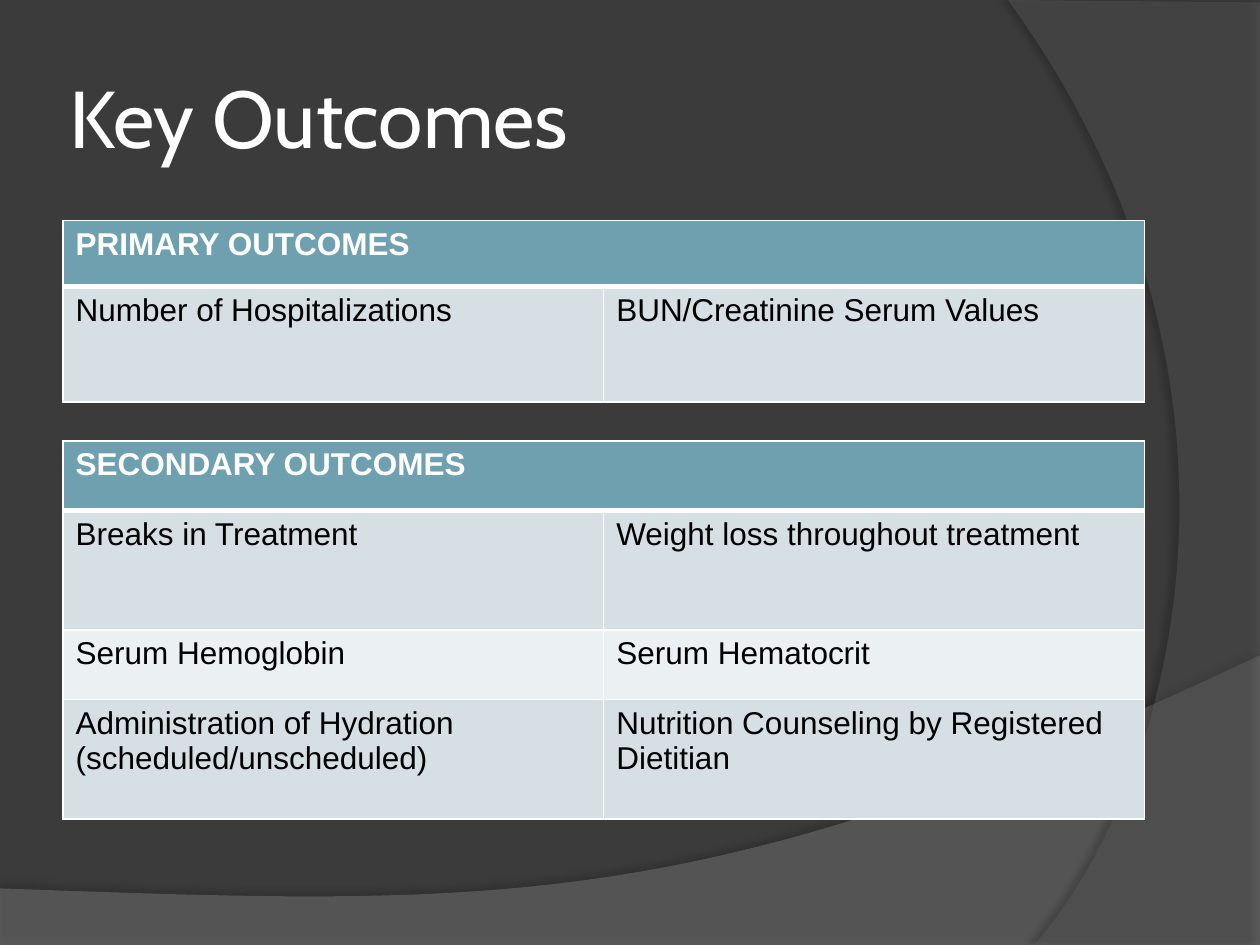
"""Build the Key Outcomes slide with its two outcome tables."""
from lxml.etree import SubElement
from pptx import Presentation
from pptx.dml.color import RGBColor
from pptx.enum.text import MSO_ANCHOR
from pptx.oxml import parse_xml
from pptx.oxml.ns import nsdecls, qn
from pptx.util import Cm, Pt

BACKGROUND = RGBColor(0x3B, 0x3B, 0x3B)
WAVE = RGBColor(0x7F, 0x7F, 0x7F)
ARC = RGBColor(0x5E, 0x5E, 0x5E)
HEADER = RGBColor(0x6E, 0xA0, 0xB0)
BANDS = [RGBColor(0xEB, 0xF0, 0xF2), RGBColor(0xD5, 0xDF, 0xE4)]
WHITE = RGBColor(0xFF, 0xFF, 0xFF)
BLACK = RGBColor(0x00, 0x00, 0x00)
STEPS = 60


def write(tf, text, color, fmt):
    p = tf.paragraphs[0]
    r = p.add_run()
    r.text = text
    r.font.color.rgb = color
    for name, value in fmt.items():
        setattr(r.font, name, value)


def set_borders(cell, bottom):
    tcPr = cell._tc.get_or_add_tcPr()
    widths = {"lnL": 1, "lnR": 1, "lnT": 1, "lnB": bottom}
    for i, (tag, width) in enumerate(widths.items()):
        tcPr.insert(i, parse_xml(
            f'<a:{tag} {nsdecls("a")} w="{Pt(width)}"><a:solidFill>'
            f'<a:srgbClr val="{WHITE}"/></a:solidFill></a:{tag}>'))


prs = Presentation()
prs.slide_width, prs.slide_height = Cm(25.4), Cm(19.05)
s = prs.slides.add_slide(prs.slide_layouts[6])
s.background.fill.solid()
s.background.fill.fore_color.rgb = BACKGROUND

swooshes = [
    ([(0, 17.91), (0, 19.05), (25.4, 19.05)],
     [(25.4, 13.21), (14.2, 18.52), (9.93, 18.26), (0, 17.91)],
     WAVE, 45, 35, 3.5, 270),
    ([(25.4, 0.05), (25.4, 19.05)],
     [(20.85, 19.05), (23.75, 15.72), (25.86, 7.62), (20.32, 0)],
     ARC, 40, 45, 4, 180),
]
for corners, curve, color, alpha, shade, dist, angle in swooshes:
    points = list(corners)
    for i in range(STEPS + 1):
        t = i / STEPS
        weights = [(1 - t) ** 3, 3 * t * (1 - t) ** 2, 3 * t ** 2 * (1 - t), t ** 3]
        points.append(tuple(sum(w * c[axis] for w, c in zip(weights, curve))
                            for axis in (0, 1)))
    points = [(Cm(x), Cm(y)) for x, y in points]
    builder = s.shapes.build_freeform(*points[0])
    builder.add_line_segments(points[1:])
    sp = builder.convert_to_shape()
    sp.fill.solid()
    sp.fill.fore_color.rgb = color
    sp.line.fill.background()
    sp.shadow.inherit = False
    spPr = sp._element.spPr
    clr = spPr.find(qn("a:solidFill")).find(qn("a:srgbClr"))
    SubElement(clr, qn("a:alpha"), val=str(alpha * 1000))
    spPr.find(qn("a:effectLst")).append(parse_xml(
        f'<a:outerShdw {nsdecls("a")} blurRad="{Pt(4)}" dist="{Pt(dist)}" '
        f'dir="{angle * 60000}" rotWithShape="0"><a:srgbClr val="{BLACK}">'
        f'<a:alpha val="{shade * 1000}"/></a:srgbClr></a:outerShdw>'))

tf = s.shapes.add_textbox(Cm(1.27), Cm(0.76), Cm(22.02), Cm(3.18)).text_frame
frame = {"word_wrap": True, "vertical_anchor": MSO_ANCHOR.MIDDLE,
         "margin_left": Cm(0.13), "margin_right": Cm(0.13),
         "margin_top": Cm(0.13), "margin_bottom": Cm(0.13)}
for name, value in frame.items():
    setattr(tf, name, value)
write(tf, "Key Outcomes", WHITE, {"name": "Cabin", "size": Pt(46)})

tables = [
    (4.44, [1.34, 2.32], [
        ["PRIMARY OUTCOMES"],
        ["Number of Hospitalizations", "BUN/Creatinine Serum Values"]]),
    (8.89, [1.4, 2.41, 1.4, 2.41], [
        ["SECONDARY OUTCOMES"],
        ["Breaks in Treatment", "Weight loss throughout treatment"],
        ["Serum Hemoglobin", "Serum Hematocrit"],
        ["Administration of Hydration (scheduled/unscheduled)",
         "Nutrition Counseling by Registered Dietitian"]]),
]
for top, heights, rows in tables:
    tbl = s.shapes.add_table(len(rows), 2, Cm(1.27), Cm(top),
                             Cm(21.8), Cm(sum(heights))).table
    tbl.cell(0, 0).merge(tbl.cell(0, 1))
    for i, (height, texts) in enumerate(zip(heights, rows)):
        tbl.rows[i].height = Cm(height)
        header = i == 0
        for cell in tbl.rows[i].cells:
            cell.fill.solid()
            cell.fill.fore_color.rgb = HEADER if header else BANDS[i % 2]
            set_borders(cell, 3 if header else 1)
        for j, text in enumerate(texts):
            write(tbl.cell(i, j).text_frame, text, WHITE if header else BLACK,
                  {"name": "Arial", "size": Pt(18), "bold": header})

prs.save("out.pptx")
